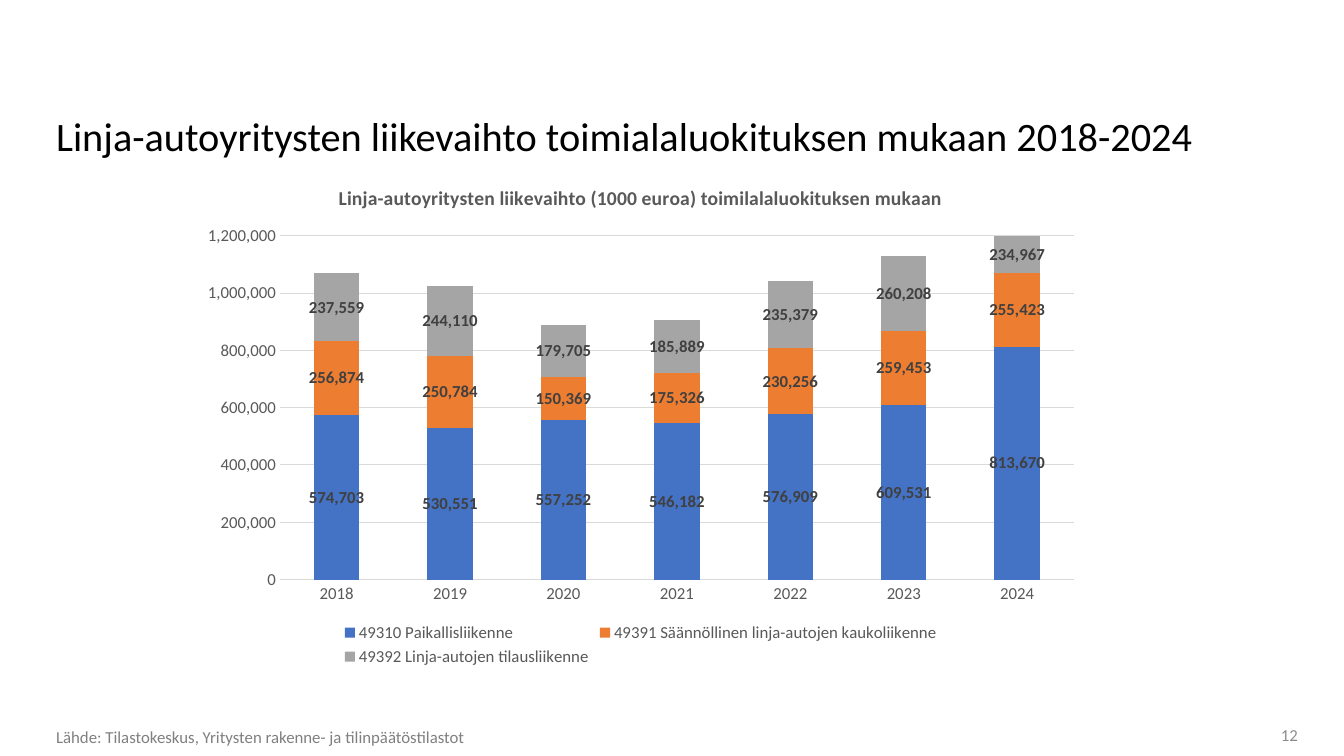
from lxml import etree
from pptx import Presentation
from pptx.chart.data import CategoryChartData
from pptx.dml.color import RGBColor
from pptx.enum.chart import XL_CHART_TYPE, XL_LEGEND_POSITION, XL_TICK_MARK
from pptx.enum.text import MSO_ANCHOR, PP_ALIGN
from pptx.oxml.ns import qn
from pptx.util import Pt

FONT = "Calibri"
NUMBER_FORMAT = "#,##0"
BLACK = RGBColor(0x00, 0x00, 0x00)
DARK = RGBColor(0x40, 0x40, 0x40)
AXIS_TEXT = RGBColor(0x59, 0x59, 0x59)
SOURCE_GRAY = RGBColor(0x80, 0x80, 0x80)
NUMBER_GRAY = RGBColor(0x8C, 0x8C, 0x8C)
GRID = RGBColor(0xD9, 0xD9, 0xD9)
BLUE = RGBColor(0x44, 0x72, 0xC4)
ORANGE = RGBColor(0xED, 0x7D, 0x31)
GRAY = RGBColor(0xA5, 0xA5, 0xA5)

YEARS = [str(year) for year in range(2018, 2025)]
TURNOVER = [
    ("49310 Paikallisliikenne", BLUE,
     (574703, 530551, 557252, 546182, 576909, 609531, 813670)),
    ("49391 Säännöllinen linja-autojen kaukoliikenne", ORANGE,
     (256874, 250784, 150369, 175326, 230256, 259453, 255423)),
    ("49392 Linja-autojen tilausliikenne", GRAY,
     (237559, 244110, 179705, 185889, 235379, 260208, 234967)),
]
PLOT_LAYOUT = {"x": 0.1, "y": 0.14, "w": 0.88, "h": 0.68}


def format_font(font, size, color, bold=False):
    font.name = FONT
    font.size = Pt(size)
    font.bold = bold
    font.color.rgb = color


def add_text(slide, box, text, size, color, anchor=MSO_ANCHOR.MIDDLE,
             align=PP_ALIGN.LEFT, right_inset=7.2, line_spacing=1.0):
    sp = slide.shapes.add_textbox(*map(Pt, box))
    tf = sp.text_frame
    tf.word_wrap = True
    tf.vertical_anchor = anchor
    tf.margin_right = Pt(right_inset)
    p = tf.paragraphs[0]
    p.alignment = align
    p.line_spacing = line_spacing
    r = p.add_run()
    r.text = text
    format_font(r.font, size, color)


def set_plot_layout(chart):
    plot_area = chart._chartSpace.chart.plotArea
    for old in plot_area.findall(qn("c:layout")):
        plot_area.remove(old)
    layout = etree.Element(qn("c:layout"))
    manual = etree.SubElement(layout, qn("c:manualLayout"))
    settings = {"layoutTarget": "inner", "xMode": "edge", "yMode": "edge", **PLOT_LAYOUT}
    for tag, value in settings.items():
        etree.SubElement(manual, qn(f"c:{tag}")).set("val", str(value))
    plot_area.insert(0, layout)


def format_axes(chart):
    for axis in (chart.category_axis, chart.value_axis):
        axis.major_tick_mark = XL_TICK_MARK.NONE
        axis.minor_tick_mark = XL_TICK_MARK.NONE
        format_font(axis.tick_labels.font, 12, AXIS_TEXT)
    values = chart.value_axis
    values.minimum_scale = 0
    values.maximum_scale = 1200000
    values.major_unit = 200000
    values.tick_labels.number_format = NUMBER_FORMAT
    values.tick_labels.number_format_is_linked = False
    values.format.line.fill.background()
    for line in (chart.category_axis.format.line, values.major_gridlines.format.line):
        line.color.rgb = GRID
        line.width = Pt(0.75)


def add_turnover_chart(slide, box):
    data = CategoryChartData(number_format=NUMBER_FORMAT)
    data.categories = YEARS
    for name, _, values in TURNOVER:
        data.add_series(name, values)
    chart = slide.shapes.add_chart(
        XL_CHART_TYPE.COLUMN_STACKED, *map(Pt, box), data).chart
    format_font(chart.font, 10, BLACK)

    chart.has_title = True
    p = chart.chart_title.text_frame.paragraphs[0]
    r = p.add_run()
    r.text = "Linja-autoyritysten liikevaihto (1000 euroa) toimilalaluokituksen mukaan"
    format_font(r.font, 14, AXIS_TEXT, bold=True)
    chart.chart_title.include_in_layout = False

    chart.has_legend = True
    chart.legend.position = XL_LEGEND_POSITION.BOTTOM
    chart.legend.include_in_layout = False
    format_font(chart.legend.font, 12, AXIS_TEXT)

    plot = chart.plots[0]
    plot.gap_width = 150
    plot.overlap = 100
    plot.vary_by_categories = False
    for series, (_, color, _) in zip(plot.series, TURNOVER):
        series.format.fill.solid()
        series.format.fill.fore_color.rgb = color
        labels = series.data_labels
        labels.show_value = True
        labels.number_format = NUMBER_FORMAT
        labels.number_format_is_linked = False
        format_font(labels.font, 12, DARK, bold=True)

    format_axes(chart)
    set_plot_layout(chart)


def add_footer(slide, box):
    left, top, width, height = box
    add_text(slide, (left, top + 4, 850, 19),
             "Lähde: Tilastokeskus, Yritysten rakenne- ja tilinpäätöstilastot",
             12, SOURCE_GRAY, line_spacing=0.9)
    add_text(slide, (left + width - 60, top, 60, height - 1), "12", 12, NUMBER_GRAY,
             align=PP_ALIGN.RIGHT, right_inset=0)


def main():
    prs = Presentation()
    prs.slide_width = Pt(960)
    prs.slide_height = Pt(540)
    slide = prs.slides.add_slide(prs.slide_layouts[6])
    add_text(slide, (33, 72, 894, 45.5),
             "Linja-autoyritysten liikevaihto toimialaluokituksen mukaan 2018-2024",
             28.8, BLACK, anchor=MSO_ANCHOR.BOTTOM)
    add_turnover_chart(slide, (135.5, 118, 644.5, 361))
    add_footer(slide, (33, 514, 894, 23))
    prs.save("out.pptx")


if __name__ == "__main__":
    main()
